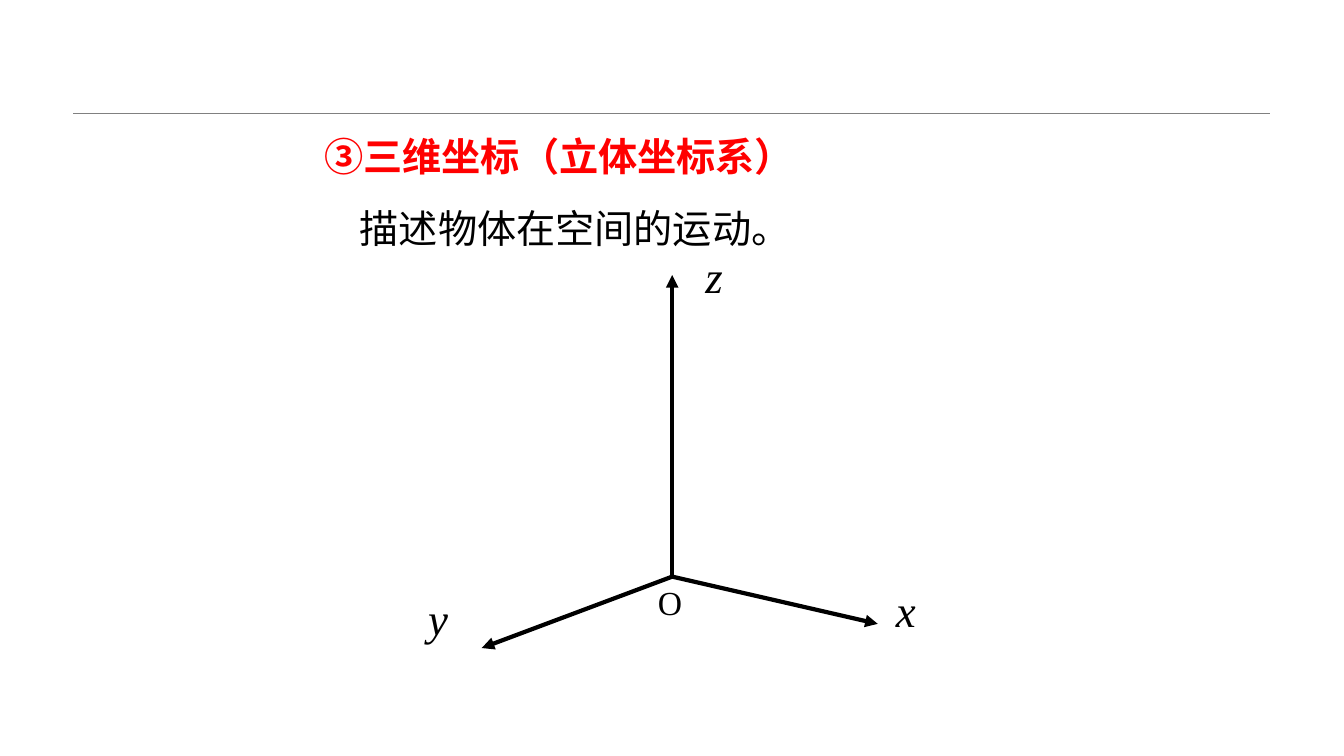
from dataclasses import dataclass

from lxml import etree
from pptx import Presentation
from pptx.dml.color import RGBColor
from pptx.enum.shapes import MSO_CONNECTOR
from pptx.enum.text import MSO_ANCHOR, MSO_AUTO_SIZE, PP_ALIGN
from pptx.oxml.ns import qn
from pptx.shapes.base import BaseShape
from pptx.slide import Slide
from pptx.util import Cm, Pt

STRAIGHT = MSO_CONNECTOR.STRAIGHT
MIDDLE, BOTTOM = MSO_ANCHOR.MIDDLE, MSO_ANCHOR.BOTTOM
LEFT = PP_ALIGN.LEFT
NO_AUTOFIT = MSO_AUTO_SIZE.NONE
TITLE_ONLY = 5


@dataclass(frozen=True)
class Theme:
    font: str = "Times New Roman"
    ink: RGBColor = RGBColor(0x00, 0x00, 0x00)
    heading: RGBColor = RGBColor(0xFF, 0x00, 0x00)
    rule: RGBColor = RGBColor(0x80, 0x80, 0x80)
    body_size: int = 28
    axis_size: int = 32
    origin_size: int = 24
    axis_width: float = 3
    rule_width: float = 0.25


THEME = Theme()


@dataclass(frozen=True)
class Point:
    x: float
    y: float


@dataclass(frozen=True)
class Label:
    """Text with its frame, in centimetres."""
    text: str
    left: float
    top: float
    width: float
    height: float
    size: int
    color: RGBColor = THEME.ink
    bold: bool = False
    italic: bool = False
    anchor: MSO_ANCHOR = BOTTOM


@dataclass(frozen=True)
class Axis:
    tip: Point
    label: Label


def axis_label(text: str, left: float, top: float, width: float) -> Label:
    return Label(text, left, top, width, 1.63, THEME.axis_size, italic=True)


ORIGIN = Point(16.94, 14.53)
AXES = (
    Axis(Point(16.94, 6.93), axis_label("z", 17.53, 6.12, 2.21)),
    Axis(Point(22.12, 15.72), axis_label("x", 22.33, 14.53, 2.21)),
    Axis(Point(12.14, 16.33), axis_label("y", 10.54, 14.73, 1.6)),
)
ORIGIN_LABEL = Label("O", 16.33, 14.53, 3, 1.27, THEME.origin_size)
HEADING = Label("③三维坐标（立体坐标系）", 7.92, 3.02, 19.53, 1.81, THEME.body_size,
                color=THEME.heading, bold=True, anchor=MIDDLE)
DESCRIPTION = Label("描述物体在空间的运动。", 8.82, 4.83, 18.63, 1.81, THEME.body_size,
                    anchor=MIDDLE)


def fill_label(box: BaseShape, label: Label) -> None:
    """Place a text shape and write the label into it."""
    box.left, box.top = Cm(label.left), Cm(label.top)
    box.width, box.height = Cm(label.width), Cm(label.height)
    frame = box.text_frame
    frame.word_wrap = True
    frame.auto_size = NO_AUTOFIT
    frame.vertical_anchor = label.anchor
    para = frame.paragraphs[0]
    para.alignment = LEFT
    span = para.add_run()
    span.text = label.text
    span.font.name = THEME.font
    span.font.size = Pt(label.size)
    span.font.bold = label.bold
    span.font.italic = label.italic
    span.font.color.rgb = label.color


def add_label(page: Slide, label: Label) -> None:
    fill_label(page.shapes.add_textbox(0, 0, 0, 0), label)


def add_line(page: Slide, start: Point, end: Point, color: RGBColor,
             width: float, arrow: bool = False) -> None:
    line = page.shapes.add_connector(
        STRAIGHT, Cm(start.x), Cm(start.y), Cm(end.x), Cm(end.y))
    line.line.color.rgb = color
    line.line.width = Pt(width)
    properties = line.element.spPr
    if arrow:
        outline = properties.find(qn("a:ln"))
        etree.SubElement(outline, qn("a:tailEnd"), type="triangle")
    etree.SubElement(properties, qn("a:effectLst"))


def main() -> None:
    deck = Presentation()
    deck.slide_width, deck.slide_height = Cm(33.87), Cm(19.05)
    page = deck.slides.add_slide(deck.slide_layouts[TITLE_ONLY])
    add_line(page, Point(1.85, 2.85), Point(32, 2.85), THEME.rule, THEME.rule_width)
    fill_label(page.shapes.title, HEADING)
    add_label(page, DESCRIPTION)
    for axis in AXES:
        add_line(page, ORIGIN, axis.tip, THEME.ink, THEME.axis_width, arrow=True)
        add_label(page, axis.label)
    add_label(page, ORIGIN_LABEL)
    deck.save("out.pptx")


if __name__ == "__main__":
    main()
